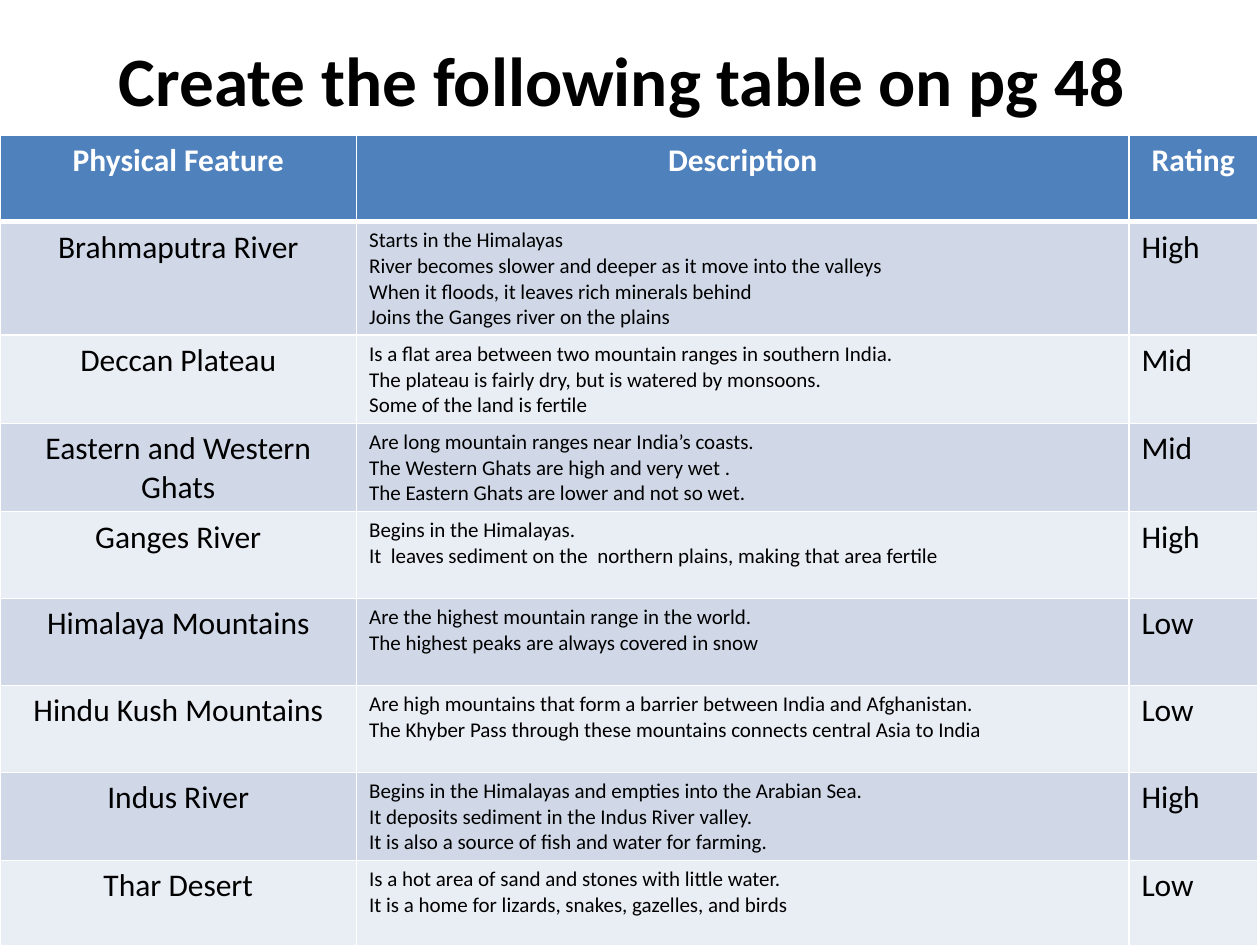
from dataclasses import dataclass

from lxml import etree
from pptx import Presentation
from pptx import util as u
from pptx.dml.color import RGBColor
from pptx.enum import text as t
from pptx.oxml.ns import qn


@dataclass(frozen=True)
class Theme:
    font: str = "Calibri"
    ink: str = "000000"
    white: str = "FFFFFF"
    head: str = "4F81BD"
    bands: tuple = ("D0D8E8", "E9EDF4")
    title: float = 39.6
    body: float = 18
    note: float = 12
    thin: float = 1
    thick: float = 3


THEME = Theme()
MID = t.PP_ALIGN.CENTER
LEFT = t.PP_ALIGN.LEFT
WIDTHS = (2.83, 6.13, 1.02)
HEADS = ("Physical Feature", "Description", "Rating")
ROWS = (
    ("Brahmaputra River",
     ("Starts in the Himalayas",
      "River becomes slower and deeper as it move into the valleys",
      "When it floods, it leaves rich minerals behind",
      "Joins the Ganges river on the plains"), "High"),
    ("Deccan Plateau",
     ("Is a flat area between two mountain ranges in southern India.",
      "The plateau is fairly dry, but is watered by monsoons.",
      "Some of the land is fertile"), "Mid"),
    ("Eastern and Western Ghats",
     ("Are long mountain ranges near India’s coasts.",
      "The Western Ghats are high and very wet .",
      "The Eastern Ghats are lower and not so wet."), "Mid"),
    ("Ganges River",
     ("Begins in the Himalayas.",
      "It  leaves sediment on the  northern plains, making that area fertile"),
     "High"),
    ("Himalaya Mountains",
     ("Are the highest mountain range in the world.",
      "The highest peaks are always covered in snow"), "Low"),
    ("Hindu Kush Mountains",
     ("Are high mountains that form a barrier between India and Afghanistan.",
      "The Khyber Pass through these mountains connects central Asia to India"),
     "Low"),
    ("Indus River",
     ("Begins in the Himalayas and empties into the Arabian Sea.",
      "It deposits sediment in the Indus River valley.",
      "It is also a source of fish and water for farming."), "High"),
    ("Thar Desert",
     ("Is a hot area of sand and stones with little water.",
      "It is a home for lizards, snakes, gazelles, and birds"), "Low"),
)


def write(frame, lines, size=THEME.body, color=THEME.ink, bold=False, align=LEFT):
    for i, line in enumerate(lines):
        para = frame.add_paragraph() if i else frame.paragraphs[0]
        para.alignment = align
        run = para.add_run()
        run.text = line
        font = run.font
        font.name, font.size, font.bold = THEME.font, u.Pt(size), bold
        font.color.rgb = RGBColor.from_string(color)


def edge(cell, base):
    props = cell._tc.get_or_add_tcPr()
    sides = (("L", THEME.thin), ("R", THEME.thin), ("T", THEME.thin), ("B", base))
    for i, (side, width) in enumerate(sides):
        line = etree.Element(qn(f"a:ln{side}"), w=str(u.Pt(width)))
        fill = etree.SubElement(line, qn("a:solidFill"))
        etree.SubElement(fill, qn("a:srgbClr"), val=THEME.white)
        props.insert(i, line)


def paint(cell, lines, fill, base=THEME.thin, **style):
    cell.fill.solid()
    cell.fill.fore_color.rgb = RGBColor.from_string(fill)
    write(cell.text_frame, lines, **style)
    edge(cell, base)


def add_title(slide, box):
    frame = slide.shapes.add_textbox(*box).text_frame
    frame.word_wrap = True
    frame.vertical_anchor = t.MSO_ANCHOR.MIDDLE
    write(frame, ["Create the following table on pg 48 "],
          size=THEME.title, bold=True, align=MID)


def add_grid(slide, box):
    grid = slide.shapes.add_table(len(ROWS) + 1, len(HEADS), *box).table
    for col, width in zip(grid.columns, WIDTHS):
        col.width = u.Inches(width)
    for row in grid.rows:
        row.height = u.Inches(0.69)
    for i, head in enumerate(HEADS):
        paint(grid.cell(0, i), [head], THEME.head, base=THEME.thick,
              color=THEME.white, bold=True, align=MID)
    for i, (name, notes, rate) in enumerate(ROWS):
        fill = THEME.bands[i % 2]
        paint(grid.cell(i + 1, 0), [name], fill, align=MID)
        paint(grid.cell(i + 1, 1), notes, fill, size=THEME.note)
        paint(grid.cell(i + 1, 2), [rate], fill)


def main():
    deck = Presentation()
    deck.slide_width, deck.slide_height = u.Inches(10), u.Inches(7.5)
    slide = deck.slides.add_slide(deck.slide_layouts[6])
    add_title(slide, [u.Inches(n) for n in (0.5, 0, 9, 1.25)])
    add_grid(slide, [u.Inches(n) for n in (0, 1.07, sum(WIDTHS), 6.21)])
    deck.save("out.pptx")


if __name__ == "__main__":
    main()
